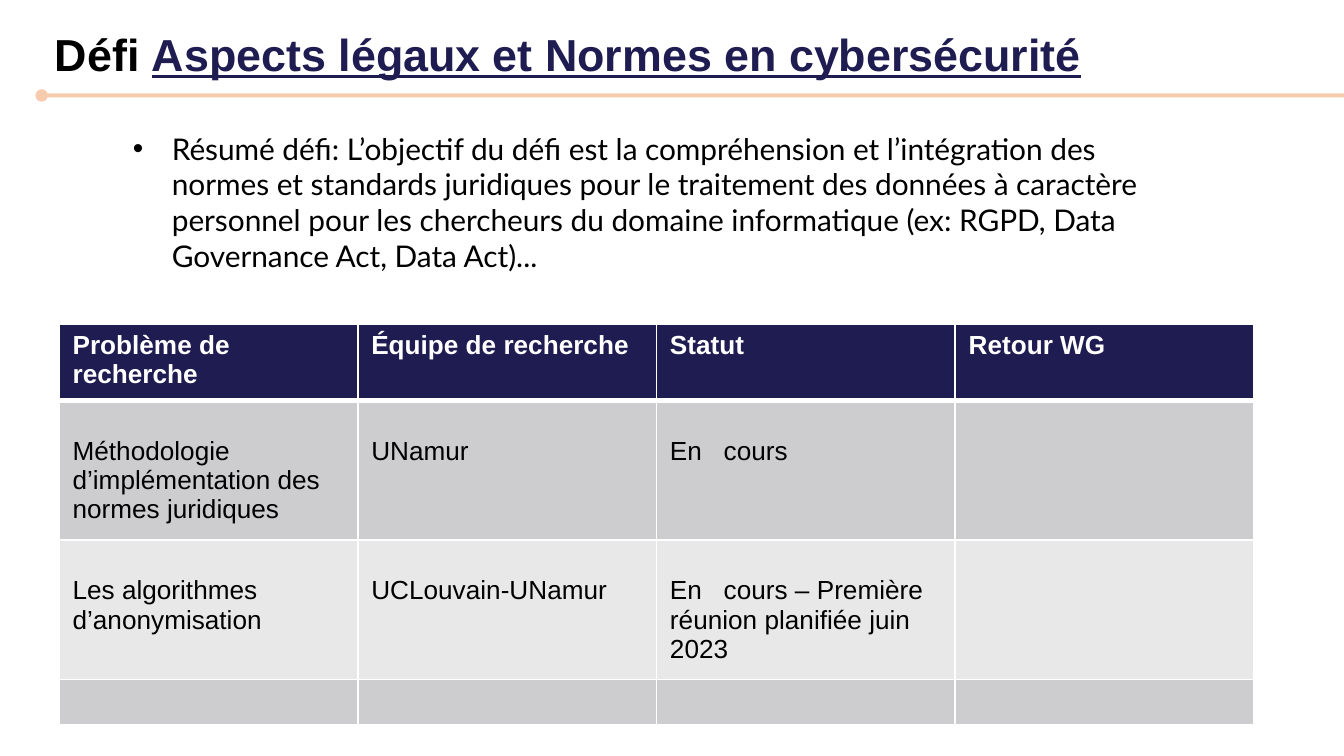
from lxml.etree import SubElement
from pptx import Presentation
from pptx.dml.color import RGBColor
from pptx.enum.shapes import MSO_CONNECTOR as Connector
from pptx.oxml.ns import qn
from pptx.util import Inches, Pt

NAVY, ORANGE, WHITE, BLACK = "1F1C51", "EB7E33", "FFFFFF", "000000"
BANDS = ("CDCDD0", "E8E8E9")
SUMMARY = (
    "Résumé défi: L’objectif du défi est la compréhension et l’intégration des "
    "normes et standards juridiques pour le traitement des données à caractère "
    "personnel pour les chercheurs du domaine informatique (ex: RGPD, Data "
    "Governance Act, Data Act)..."
)
ROWS = [
    ("Problème de recherche", "Équipe de recherche", "Statut", "Retour WG"),
    ("Méthodologie d’implémentation des normes juridiques", "UNamur", "En\tcours", ""),
    ("Les algorithmes d’anonymisation", "UCLouvain-UNamur",
     "En\tcours – Première réunion planifiée juin 2023", ""),
    ("", "", "", ""),
]
ROW_HEIGHTS = (0.56, 1.04, 1.04, 0.33)


def rgb(color):
    """Turn a hex string into a colour."""
    return RGBColor.from_string(color)


def style_run(run, size, color, font="Arial", bold=False, underline=False):
    """Set the font of one run."""
    run.font.name, run.font.size = font, Pt(size)
    run.font.bold, run.font.underline = bold, underline
    run.font.color.rgb = rgb(color)


def add_text_frame(slide, left, top, width, height):
    """Add a wrapping text box and return its frame."""
    frame = slide.shapes.add_textbox(
        Inches(left), Inches(top), Inches(width), Inches(height)).text_frame
    frame.word_wrap = True
    return frame


def add_heading(slide, left, top, width, height):
    """Place the two-part title and the rule beneath it."""
    title = add_text_frame(slide, left, top, width, height).paragraphs[0]
    for text, color, underline in (
            ("Défi ", BLACK, False),
            ("Aspects légaux et Normes en cybersécurité", NAVY, True)):
        run = title.add_run()
        run.text = text
        style_run(run, 24, color, bold=True, underline=underline)

    rule_y = Inches(top + height + 0.06)
    rule = slide.shapes.add_connector(
        Connector.STRAIGHT, Inches(left), rule_y, Inches(left + 10.02), rule_y)
    rule.line.width = Pt(2.25)
    rule.line.color.rgb = rgb(ORANGE)
    properties = rule.element.spPr
    outline = properties.find(qn("a:ln"))
    tint = outline.find(qn("a:solidFill")).find(qn("a:srgbClr"))
    SubElement(tint, qn("a:alpha"), val="40000")
    for end in ("a:headEnd", "a:tailEnd"):
        SubElement(outline, qn(end), type="oval")
    SubElement(properties, qn("a:effectLst"))


def add_summary(slide, left, top, width, height):
    """Place the bulleted summary of the challenge."""
    frame = add_text_frame(slide, left, top, width, height)
    frame.margin_top = frame.margin_bottom = Inches(0.1)
    summary = frame.paragraphs[0]
    summary.text = SUMMARY
    style_run(summary.runs[0], 16, BLACK, font="Lato")
    properties = summary._p.get_or_add_pPr()
    properties.set("marL", str(Inches(0.29)))
    properties.set("indent", str(-Inches(0.29)))
    bullet_color = SubElement(properties, qn("a:buClr"))
    SubElement(bullet_color, qn("a:srgbClr"), val=BLACK)
    SubElement(properties, qn("a:buFont"), typeface="Arial")
    SubElement(properties, qn("a:buChar"), char="•")


def set_borders(cell, bottom_width):
    """Draw white borders round a cell."""
    properties = cell._tc.get_or_add_tcPr()
    sides = (("a:lnL", 1), ("a:lnR", 1), ("a:lnT", 1), ("a:lnB", bottom_width))
    for position, (side, width) in enumerate(sides):
        border = SubElement(properties, qn(side), w=str(Pt(width)))
        fill = SubElement(border, qn("a:solidFill"))
        SubElement(fill, qn("a:srgbClr"), val=WHITE)
        properties.insert(position, border)


def fill_cell(cell, text, row):
    """Write and colour one cell according to its row."""
    header = row == 0
    cell.fill.solid()
    cell.fill.fore_color.rgb = rgb(NAVY if header else BANDS[(row - 1) % 2])
    set_borders(cell, 3 if header else 1)
    paragraph = cell.text_frame.paragraphs[0]
    if text:
        paragraph.text = text
        style_run(paragraph.runs[0], 14, WHITE if header else BLACK, bold=header)
        if not header:
            cell.margin_top = Inches(0.27)
    else:
        SubElement(paragraph._p, qn("a:endParaRPr"), sz="1400")
    if "\t" in text:
        stops = SubElement(paragraph._p.get_or_add_pPr(), qn("a:tabLst"))
        SubElement(stops, qn("a:tab"), pos=str(Inches(0.4)), algn="l")


def add_research_table(slide, left, top, width):
    """Place the table of research problems."""
    table = slide.shapes.add_table(
        len(ROWS), len(ROWS[0]), Inches(left), Inches(top),
        Inches(width), Inches(sum(ROW_HEIGHTS))).table
    for row, (texts, height) in enumerate(zip(ROWS, ROW_HEIGHTS)):
        table.rows[row].height = Inches(height)
        for column, text in enumerate(texts):
            fill_cell(table.cell(row, column), text, row)


def main():
    """Build the slide and save it."""
    deck = Presentation()
    deck.slide_width = Inches(10)
    deck.slide_height = deck.slide_width * 9 // 16
    slide = deck.slides.add_slide(deck.slide_layouts[6])
    add_heading(slide, 0.31, 0.15, 13.38, 0.5)
    add_summary(slide, 0.89, 0.87, 8.01, 1.64)
    add_research_table(slide, 0.44, 2.41, 8.89)
    deck.save("out.pptx")


if __name__ == "__main__":
    main()
